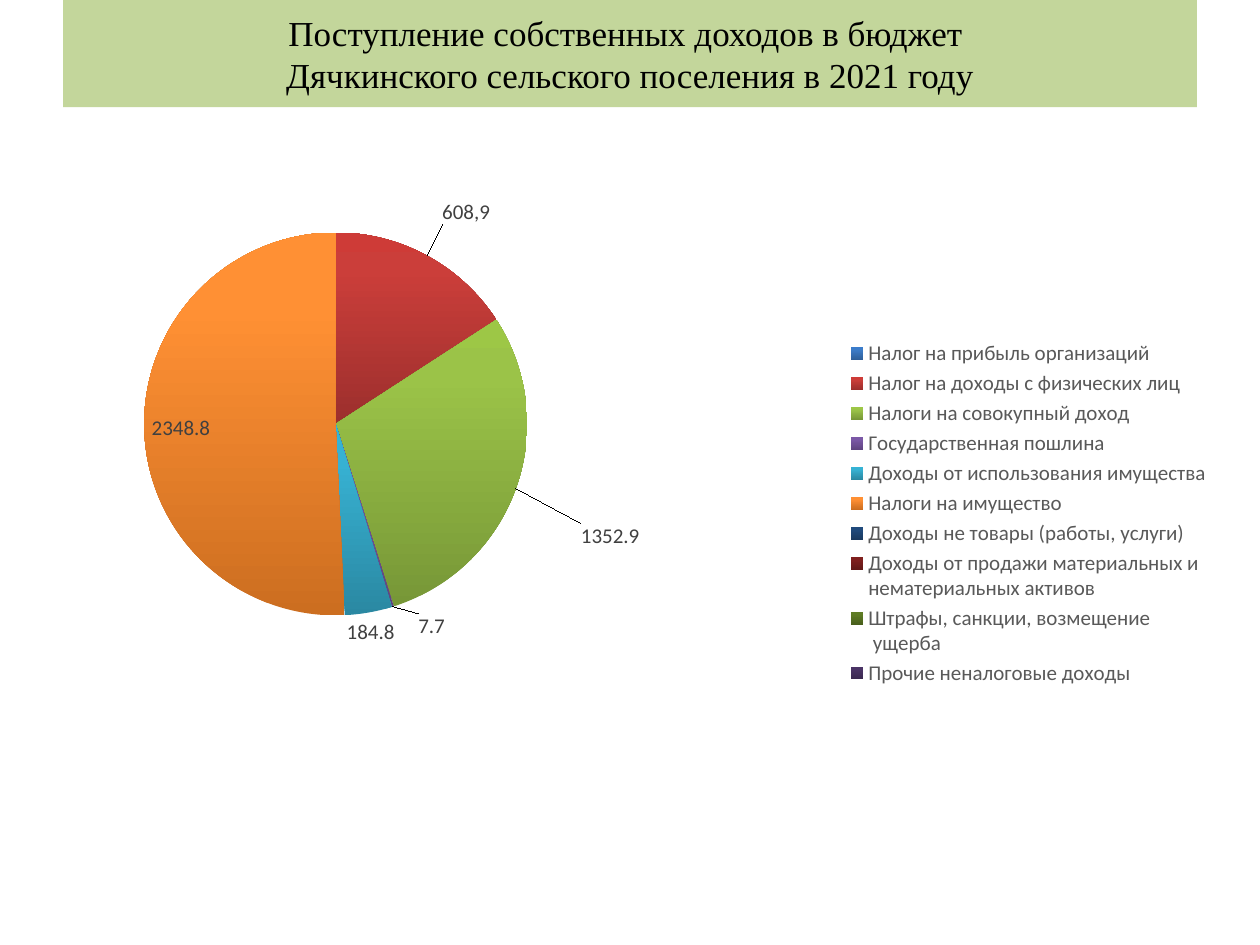
from copy import deepcopy

from lxml import etree
from pptx import Presentation
from pptx.chart.data import CategoryChartData
from pptx.dml.color import RGBColor
from pptx.enum.chart import XL_CHART_TYPE, XL_LABEL_POSITION, XL_LEGEND_POSITION
from pptx.enum.text import MSO_ANCHOR, PP_ALIGN
from pptx.oxml.ns import qn
from pptx.util import Inches, Pt

PIE = XL_CHART_TYPE.PIE
OUTSIDE = XL_LABEL_POSITION.OUTSIDE_END
INSIDE = XL_LABEL_POSITION.INSIDE_END
LEGEND_RIGHT = XL_LEGEND_POSITION.RIGHT
CENTER = PP_ALIGN.CENTER
MIDDLE = MSO_ANCHOR.MIDDLE

TITLE = ("Поступление собственных доходов в бюджет \v"
         "Дячкинского сельского поселения в 2021 году")
# Category, value, gradient colours from bottom to top
INCOME = [
    ("Налог на прибыль организаций", None, ("2F5F99", "3D7CC7", "3A7CCB")),
    ("Налог на доходы с физических лиц", 733.5, ("9C2F2D", "CB3E3A", "CE3B37")),
    ("Налоги на совокупный доход", 1352.9, ("779737", "9BC348", "9DC746")),
    ("Государственная пошлина ", 7.7, ("5F4480", "7B58A6", "7C57A8")),
    ("Доходы от использования имущества", 184.8, ("2A88A2", "37B1D2", "34B4D6")),
    ("Налоги на имущество", 2348.8, ("CC6E20", "FF9034", "FF9136")),
    ("Доходы не товары (работы, услуги)", None, ("19395F", "204A7C", "1E4A7E")),
    ("Доходы от продажи материальных и \nнематериальных активов", None,
     ("621917", "7F201E", "811F1C")),
    ("Штрафы, санкции, возмещение\n ущерба", None, ("495F1C", "5F7C25", "607E23")),
    ("Прочие неналоговые доходы", None, ("39284E", "4A3365", "4A3366")),
]
STOP_POSITIONS = (0, 0.8, 1)
INCOME_TAX = 1
PROPERTY_TAX = 5
# Slice index: label shift as a share of the chart's width and height
LABEL_SHIFTS = {INCOME_TAX: (0.01, -0.03), 2: (0.05, 0.04), 3: (0.02, 0), 4: (-0.02, 0)}


def rgb(color):
    return RGBColor.from_string(color)


def set_font(font, size, color, name="Calibri"):
    font.name = name
    font.size = Pt(size)
    font.color.rgb = rgb(color)


def set_manual_layout(parent, index, **settings):
    """Replace the layout of a chart part, as its child at the given index."""
    for old_layout in parent.findall(qn("c:layout")):
        parent.remove(old_layout)
    layout = etree.Element(qn("c:layout"))
    manual = etree.SubElement(layout, qn("c:manualLayout"))
    for tag, value in settings.items():
        etree.SubElement(manual, qn(f"c:{tag}")).set("val", str(value))
    parent.insert(index, layout)


def add_title(slide):
    title = slide.shapes.title
    title.left, title.top = Inches(0.5), Inches(0)
    title.width, title.height = Inches(9), Inches(0.85)
    title.fill.solid()
    title.fill.fore_color.rgb = rgb("C3D69B")
    frame = title.text_frame
    frame.text = TITLE
    frame.vertical_anchor = MIDDLE
    paragraph = frame.paragraphs[0]
    paragraph.alignment = CENTER
    set_font(paragraph.font, 20, "000000", "Times New Roman")


def fill_slice(chart, point, colors):
    fill = point.format.fill
    fill.gradient()
    fill.gradient_angle = 90
    stop_list = chart.element.xpath(".//a:gsLst")[-1]
    stop_list.append(deepcopy(stop_list[-1]))
    for stop, position, color in zip(fill.gradient_stops, STOP_POSITIONS, colors):
        stop.position = position
        stop.color.rgb = rgb(color)


def label_slices(chart, series):
    labels = series.data_labels
    labels.show_value = True
    labels.position = OUTSIDE
    set_font(labels.font, 12, "404040")

    income_tax = series.points[INCOME_TAX].data_label.text_frame
    income_tax.text = "608,9"
    set_font(income_tax.paragraphs[0].font, 12, "404040")

    for index, (x, y) in LABEL_SHIFTS.items():
        label = series.points[index].data_label
        label.position = OUTSIDE
        if index != INCOME_TAX:
            set_font(label.font, 12, "404040")
        label_xml = chart.element.xpath(f".//c:dLbl[c:idx/@val='{index}']")[0]
        set_manual_layout(label_xml, 1, x=x, y=y)

    property_tax = series.points[PROPERTY_TAX].data_label
    property_tax.position = INSIDE
    set_font(property_tax.font, 12, "404040")


def add_income_chart(slide):
    data = CategoryChartData()
    data.categories = [category for category, _, _ in INCOME]
    data.add_series("Series 1", [value for _, value, _ in INCOME])
    chart = slide.shapes.add_chart(
        PIE, Inches(0.5), Inches(0.85), Inches(9.21), Inches(6.45), data).chart
    set_font(chart.font, 10, "000000")
    chart.has_title = False
    chart.has_legend = True
    chart.legend.position = LEGEND_RIGHT
    chart.legend.include_in_layout = False
    set_font(chart.legend.font, 12, "595959")

    plot = chart.plots[0]
    plot.vary_by_categories = True
    series = plot.series[0]
    for index, (_, _, colors) in enumerate(INCOME):
        fill_slice(chart, series.points[index], colors)
    label_slices(chart, series)

    plot_area = chart.element.xpath(".//c:plotArea")[0]
    set_manual_layout(plot_area, 0, layoutTarget="inner", xMode="edge", yMode="edge",
                      x=0.07, y=0.12, w=0.33, h=0.54)


def main():
    presentation = Presentation()
    presentation.slide_width = Inches(10)
    presentation.slide_height = Inches(7.5)
    slide = presentation.slides.add_slide(presentation.slide_layouts[5])
    add_title(slide)
    add_income_chart(slide)
    presentation.save("out.pptx")


if __name__ == "__main__":
    main()
